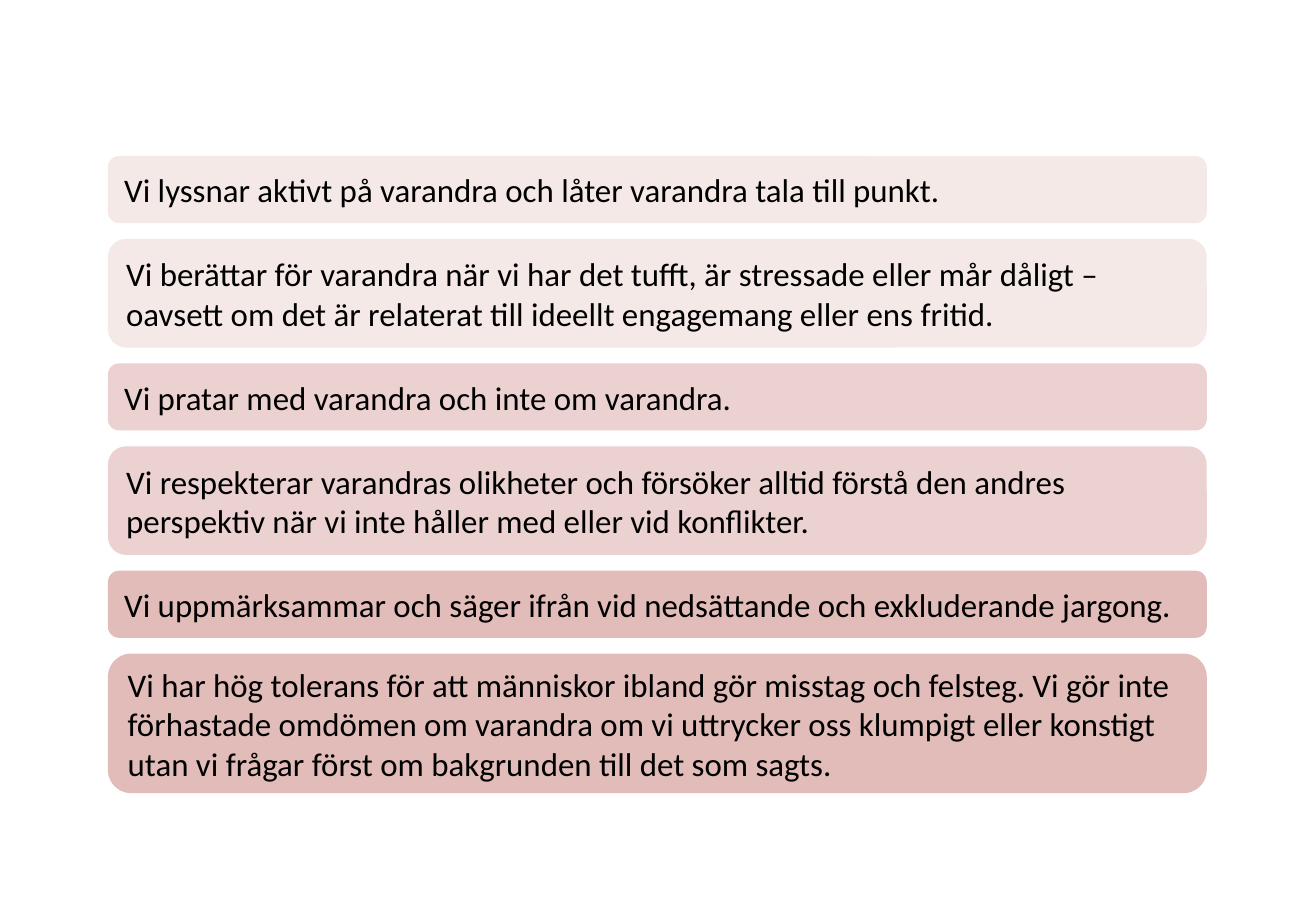
from pptx import Presentation
from pptx.dml.color import RGBColor
from pptx.enum.shapes import MSO_SHAPE as Shape
from pptx.enum.text import MSO_ANCHOR as Anchor, PP_ALIGN as Align
from pptx.util import Pt

# 200 px to the inch
PX = 4572
SLIDE_WIDTH, SLIDE_HEIGHT = 2000, 1390

# Stack of rules
LEFT, TOP, WIDTH, GAP = 164, 237, 1670, 24
HEIGHT_BY_LINES = {1: 102, 2: 165, 3: 212}

BLACK = RGBColor(0x00, 0x00, 0x00)
PALE_PINK = RGBColor(0xF5, 0xE9, 0xE8)
LIGHT_PINK = RGBColor(0xEB, 0xD2, 0xD0)
ROSE = RGBColor(0xE1, 0xBC, 0xB9)

# Text, number of lines, colour; some words are joined by no-break spaces
RULES = [
    ("Vi lyssnar aktivt på varandra och låter varandra tala till punkt.",
     1, PALE_PINK),
    ("Vi berättar för varandra när vi har det tufft, är stressade eller mår "
     "dåligt – oavsett om det är relaterat till ideellt engagemang eller ens "
     "fritid.", 2, PALE_PINK),
    ("Vi pratar med varandra och inte om varandra.", 1, LIGHT_PINK),
    ("Vi respekterar varandras olikheter och försöker alltid förstå den "
     "andres perspektiv när vi inte håller med eller vid konflikter.",
     2, LIGHT_PINK),
    ("Vi uppmärksammar och säger ifrån vid nedsättande och exkluderande "
     "jargong.", 1, ROSE),
    ("Vi har hög tolerans för att människor ibland gör misstag och felsteg. "
     "Vi gör inte förhastade omdömen om varandra om vi uttrycker oss "
     "klumpigt eller konstigt utan vi frågar först om bakgrunden till det "
     "som sagts.", 3, ROSE),
]


def add_rule(slide, top, height, text, colour):
    """Add one rounded bar with its rule."""
    bar = slide.shapes.add_shape(Shape.ROUNDED_RECTANGLE, LEFT * PX, top * PX,
                                 WIDTH * PX, height * PX)
    bar.shadow.inherit = False
    bar.fill.solid()
    bar.fill.fore_color.rgb = colour
    bar.line.fill.background()

    frame = bar.text_frame
    frame.word_wrap = True
    frame.vertical_anchor = Anchor.MIDDLE
    frame.text = text
    rule = frame.paragraphs[0]
    rule.alignment = Align.LEFT
    font = rule.runs[0].font
    font.name = "Calibri"
    font.size = Pt(18)
    font.color.rgb = BLACK


def main():
    deck = Presentation()
    deck.slide_width = SLIDE_WIDTH * PX
    deck.slide_height = SLIDE_HEIGHT * PX
    slide = deck.slides.add_slide(deck.slide_layouts[6])

    # Bars from top to bottom with equal gaps
    top = TOP
    for text, lines, colour in RULES:
        height = HEIGHT_BY_LINES[lines]
        add_rule(slide, top, height, text, colour)
        top += height + GAP

    deck.save("out.pptx")


if __name__ == "__main__":
    main()
